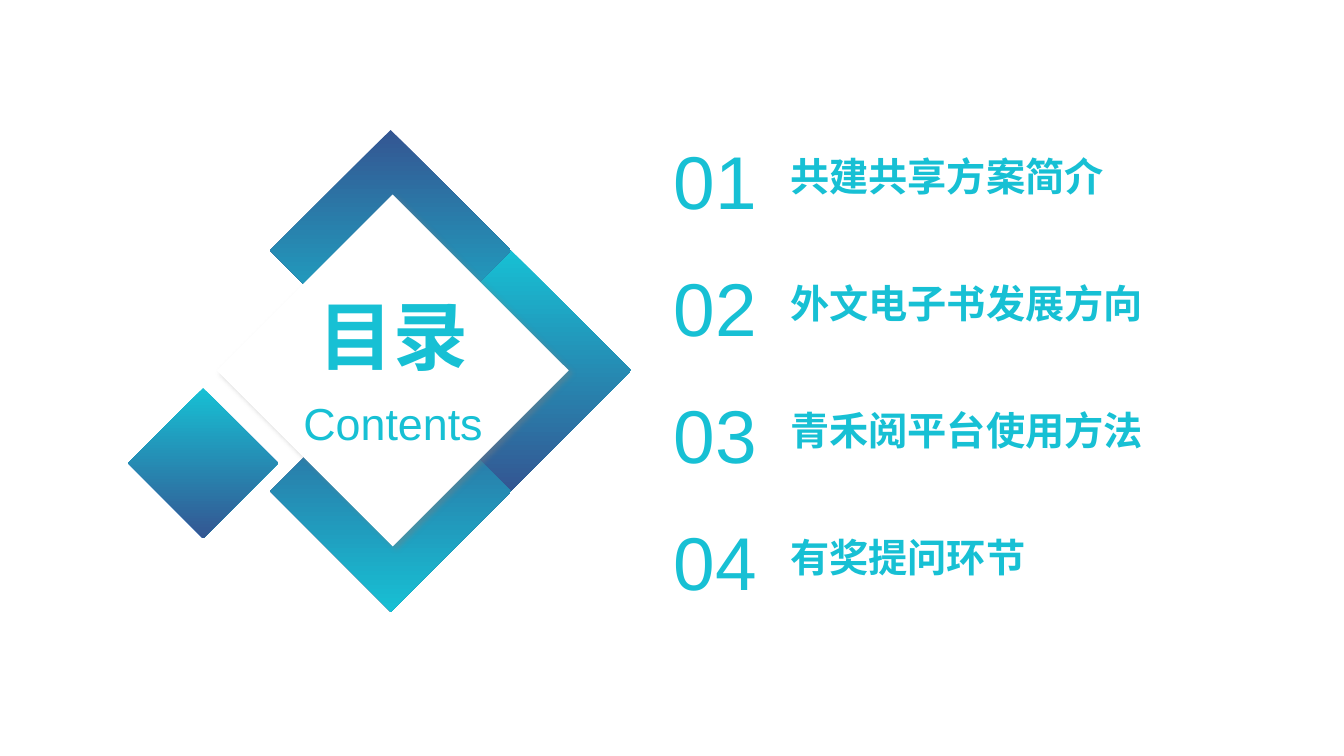
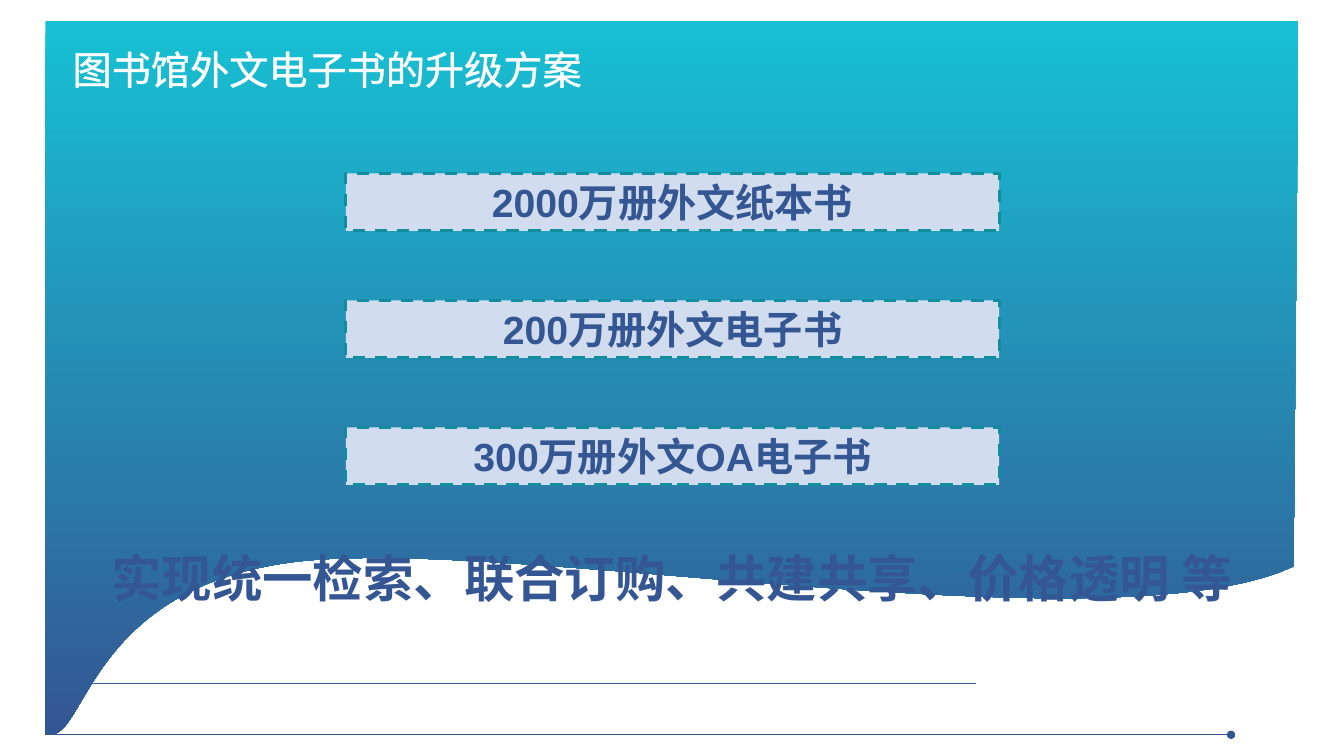
import pptx
import pptx.dml.color
import pptx.enum.dml
import pptx.enum.shapes
import pptx.enum.text
import pptx.oxml
import pptx.oxml.ns
import pptx.util

EMU_PER_PX = 9144
SLIDE_WIDTH, SLIDE_HEIGHT = 1333, 750
FONT = "Arial"
CYAN, NAVY, WHITE = "17C0D4", "345692", "FFFFFF"
PANEL_FILL, PANEL_LINE = "D1DCEF", "118E9D"
ALIGN = pptx.enum.text.PP_ALIGN
ANCHOR = pptx.enum.text.MSO_ANCHOR
PRESET = pptx.enum.shapes.MSO_SHAPE

AGENDA = ["共建共享方案简介", "外文电子书发展方向", "青禾阅平台使用方法", "有奖提问环节"]
COLLECTIONS = ["2000万册外文纸本书", "200万册外文电子书", "300万册外文OA电子书"]


def px(value):
    """Turn pixels into EMU."""
    return pptx.util.Emu(round(value * EMU_PER_PX))


def color(value):
    """Turn a hex string into a colour."""
    return pptx.dml.color.RGBColor.from_string(value)


def xml(markup):
    """Parse one DrawingML element."""
    namespace = pptx.oxml.ns.nsdecls("a")
    return pptx.oxml.parse_xml(markup.replace(" ", f" {namespace} ", 1))


def paint(shape, *colors):
    """Fill a shape with one colour, or with two from top to bottom."""
    shape.shadow.inherit = False
    shape.line.fill.background()
    if len(colors) == 1:
        shape.fill.solid()
        shape.fill.fore_color.rgb = color(colors[0])
        return
    shape.fill.gradient()
    shape.fill.gradient_angle = 270
    for stop, value in zip(shape.fill.gradient_stops, colors):
        stop.color.rgb = color(value)


def write(shape, text, size, text_color, bold=False, align=ALIGN.CENTER,
          anchor=ANCHOR.MIDDLE, wrap=True):
    """Put one formatted paragraph into a shape."""
    frame = shape.text_frame
    frame.text = text
    frame.word_wrap = wrap
    frame.auto_size = pptx.enum.text.MSO_AUTO_SIZE.NONE
    frame.vertical_anchor = anchor
    paragraph = frame.paragraphs[0]
    paragraph.alignment = align
    paragraph.font.name = FONT
    paragraph.font.size = pptx.util.Pt(size)
    paragraph.font.bold = bold
    paragraph.font.color.rgb = color(text_color)


def add_text(slide, box, text, size, text_color, **style):
    """Add a text box."""
    write(slide.shapes.add_textbox(*map(px, box)), text, size, text_color, **style)


def place_title(slide, box, text, size, text_color, **style):
    """Format the title and bring it in front of the artwork."""
    title = slide.shapes.title
    title.left, title.top, title.width, title.height = map(px, box)
    write(title, text, size, text_color, **style)
    slide.shapes.element.append(title.element)
    return title


def add_diamond(slide, left, top, size, *colors):
    """Add a square diamond."""
    shape = slide.shapes.add_shape(PRESET.DIAMOND, px(left), px(top), px(size), px(size))
    paint(shape, *colors)
    return shape


def add_rule(slide, left, right, y, dot=False):
    """Add a thin horizontal line, with a dot at its right end if asked."""
    connector = slide.shapes.add_connector(
        pptx.enum.shapes.MSO_CONNECTOR.STRAIGHT, px(left), px(y), px(right), px(y))
    connector.line.color.rgb = color(NAVY)
    connector.line.width = pptx.util.Pt(0.5)
    properties = connector.element.spPr
    if dot:
        properties.find(pptx.oxml.ns.qn("a:ln")).append(xml('<a:tailEnd type="oval"/>'))
    properties.append(xml("<a:effectLst />"))


def curve(start, control_1, control_2, end, steps=40):
    """List the points of a cubic curve after its start."""
    points = []
    for step in range(1, steps + 1):
        t = step / steps
        weights = ((1 - t) ** 3, 3 * t * (1 - t) ** 2, 3 * t ** 2 * (1 - t), t ** 3)
        points.append(tuple(
            sum(weight * value for weight, value in zip(weights, values))
            for values in zip(start, control_1, control_2, end)))
    return points


def add_wave(slide):
    """Add the gradient backdrop with its wavy lower edge."""
    right_end, crest, left_end = (1283, 562), (288, 558), (45, 728)
    points = [(1288, 21), right_end]
    points += curve(right_end, (1100, 647), (494, 530), crest)
    points += curve(crest, (81, 586), (86, 742), left_end)
    builder = slide.shapes.build_freeform(45 * EMU_PER_PX, 21 * EMU_PER_PX)
    builder.add_line_segments([(px(x), px(y)) for x, y in points], close=True)
    paint(builder.convert_to_shape(), CYAN, NAVY)


def add_panel(slide, top, text):
    """Add a dashed panel with a bold label."""
    panel = slide.shapes.add_shape(PRESET.RECTANGLE, px(343), px(top), px(648), px(57))
    paint(panel, PANEL_FILL)
    panel.line.color.rgb = color(PANEL_LINE)
    panel.line.width = pptx.util.Pt(2.25)
    panel.line.dash_style = pptx.enum.dml.MSO_LINE.DASH
    write(panel, text, 28, NAVY, bold=True)


def build_contents(slide):
    """Build the contents slide."""
    add_diamond(slide, 387, 248, 239, CYAN, NAVY)
    for top in (129, 368):
        add_diamond(slide, 268, top, 239, NAVY, CYAN)
    add_diamond(slide, 127, 385, 149, CYAN, NAVY)
    for index, text in enumerate(AGENDA):
        offset = 126 * index
        add_text(slide, (658, 129 + offset, 103, 99), f"{index + 1:02}", 53.4, CYAN, wrap=False)
        add_text(slide, (774, 153 + offset, 493, 50), text, 28, CYAN, bold=True,
                 align=ALIGN.LEFT, anchor=ANCHOR.BOTTOM)
    center = add_diamond(slide, 215, 193, 349, WHITE)
    center.element.spPr.find(pptx.oxml.ns.qn("a:effectLst")).append(xml(
        '<a:outerShdw blurRad="50800" dist="38100" dir="2700000" algn="tl" rotWithShape="0">'
        '<a:srgbClr val="808080"><a:alpha val="40000"/></a:srgbClr></a:outerShdw>'))
    place_title(slide, (292, 282, 196, 100), "目录", 53.4, CYAN, bold=True, anchor=ANCHOR.TOP)
    add_text(slide, (273, 387, 234, 64), "Contents", 32, CYAN, anchor=ANCHOR.BOTTOM)


def build_upgrade(slide):
    """Build the upgrade plan slide."""
    add_rule(slide, 92, 968, 678)
    add_rule(slide, 45, 1221, 729, dot=True)
    add_wave(slide)
    title = place_title(slide, (62, 40, 835, 57), "图书馆外文电子书的升级方案", 28, WHITE,
                        align=ALIGN.LEFT, anchor=ANCHOR.TOP)
    for properties in title.element.iter(pptx.oxml.ns.qn("a:defRPr")):
        properties.insert(0, xml(
            f'<a:ln w="10160"><a:solidFill><a:srgbClr val="{WHITE}"/></a:solidFill></a:ln>'))
    for index, text in enumerate(COLLECTIONS):
        add_panel(slide, 172 + 126 * index, text)
    add_text(slide, (97, 537, 1138, 71), "实现统一检索、联合订购、共建共享、价格透明 等", 36, NAVY,
             bold=True, wrap=False)


def main():
    """Build and save the presentation."""
    presentation = pptx.Presentation()
    presentation.slide_width, presentation.slide_height = px(SLIDE_WIDTH), px(SLIDE_HEIGHT)
    for build in (build_contents, build_upgrade):
        build(presentation.slides.add_slide(presentation.slide_layouts[5]))
    presentation.save("out.pptx")


if __name__ == "__main__":
    main()
